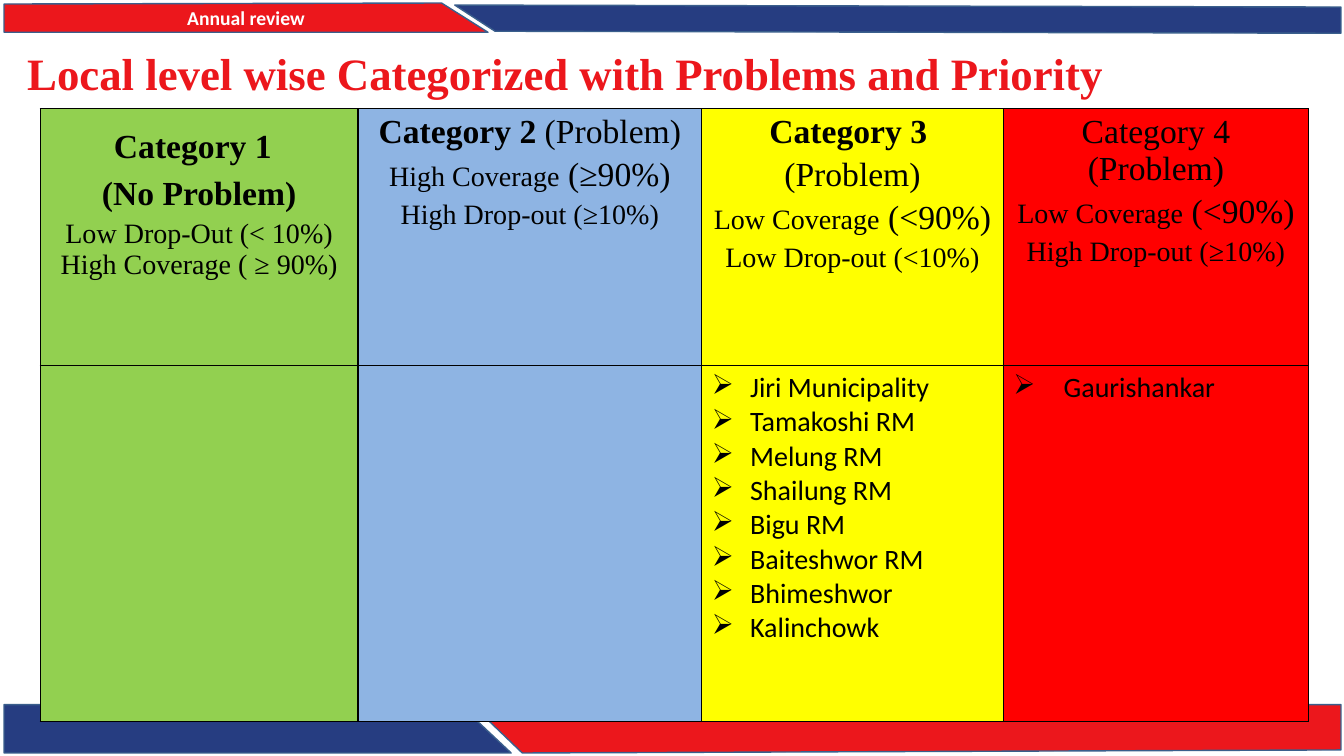
from dataclasses import dataclass

from lxml import etree
from pptx import Presentation
from pptx.dml.color import RGBColor
from pptx.enum.text import MSO_ANCHOR, PP_ALIGN
from pptx.oxml.ns import qn
from pptx.util import Emu, Pt

EMU_PER_PX = 9144  # 100 px to the inch
TITLE_ONLY = 5
CENTER, LEFT = PP_ALIGN.CENTER, PP_ALIGN.LEFT
MIDDLE = MSO_ANCHOR.MIDDLE


@dataclass(frozen=True)
class Theme:
    red: str = "EC171C"
    navy: str = "263D81"
    outline: str = "3A5F8C"
    white: str = "FFFFFF"
    black: str = "000000"
    serif: str = "Times New Roman"
    sans: str = "Calibri"
    title_size: int = 32
    gap_size: int = 36
    heading_size: int = 24
    body_size: int = 20
    tag_size: int = 14
    line_width: int = 1
    criteria_gap: int = 4


THEME = Theme()


@dataclass(frozen=True)
class Run:
    text: str
    size: int = THEME.body_size
    bold: bool = False
    font: str = THEME.serif
    color: str = THEME.black


@dataclass(frozen=True)
class Banner:
    points: tuple[tuple[int, int], ...]
    fill: str
    label: str = ""


@dataclass(frozen=True)
class Category:
    width: int
    fill: str
    criteria: tuple[tuple[Run, ...], ...]
    places: tuple[str, ...] = ()
    indent: int = 38


def heading(text: str, bold: bool = False) -> Run:
    return Run(text, THEME.heading_size, bold)


BANNERS = (
    Banner(((4, 4), (438, 3), (484, 32), (4, 32)), THEME.red, "Annual review"),
    Banner(((4, 699), (457, 700), (507, 747), (4, 747)), THEME.navy),
    Banner(((469, 700), (1330, 699), (1330, 744), (518, 747)), THEME.red),
    Banner(((451, 5), (1330, 7), (1330, 33), (491, 31)), THEME.navy),
)

LOW_COVERAGE = (Run("Low Coverage"), heading(" (<90%)"))
HIGH_DROP_OUT = (Run("High Drop-out (≥10%)"),)

CATEGORIES = (
    Category(315, "92D050", (
        (heading("Category 1", True), Run(" ", THEME.gap_size, True)),
        (heading("(No Problem)", True),),
        (Run("Low Drop-Out (< 10%)\vHigh Coverage ( ≥ 90%)"),),
    )),
    Category(341, "8EB4E3", (
        (heading("Category 2", True), heading(" (Problem)")),
        (Run("High Coverage"), heading(" (≥90%)")),
        HIGH_DROP_OUT,
    )),
    Category(299, "FFFF00", (
        (heading("Category 3 ", True),),
        (heading("(Problem)"),),
        LOW_COVERAGE,
        (Run("Low Drop-out (<10%)"),),
    ), ("Jiri Municipality", "Tamakoshi RM", "Melung RM", "Shailung RM",
        "Bigu RM", "Baiteshwor RM", "Bhimeshwor", "Kalinchowk")),
    Category(303, "FF0000", (
        (heading("Category 4 (Problem)"),),
        LOW_COVERAGE,
        HIGH_DROP_OUT,
    ), ("Gaurishankar",), 50),
)
ROW_HEIGHTS = (255, 353)


def px(length: int) -> Emu:
    return Emu(length * EMU_PER_PX)


def rgb(color: str) -> RGBColor:
    return RGBColor.from_string(color)


def add_run(paragraph, run: Run) -> None:
    for number, line in enumerate(run.text.split("\v")):
        if number:
            paragraph.add_line_break()
        part = paragraph.add_run()
        part.text = line
        part.font.size = Pt(run.size)
        part.font.bold = run.bold
        part.font.name = run.font
        part.font.color.rgb = rgb(run.color)


def paragraph_at(frame, number: int):
    return frame.add_paragraph() if number else frame.paragraphs[0]


def add_banner(slide, banner: Banner) -> None:
    start, *rest = banner.points
    builder = slide.shapes.build_freeform(*start, scale=EMU_PER_PX)
    builder.add_line_segments(rest, close=True)
    shape = builder.convert_to_shape()
    shape.shadow.inherit = False
    shape.fill.solid()
    shape.fill.fore_color.rgb = rgb(banner.fill)
    shape.line.color.rgb = rgb(THEME.outline)
    shape.line.width = Pt(THEME.line_width)
    if banner.label:
        frame = shape.text_frame
        frame.vertical_anchor = MIDDLE
        frame.margin_top = frame.margin_bottom = 0
        frame.paragraphs[0].alignment = CENTER
        add_run(frame.paragraphs[0], Run(banner.label, THEME.tag_size, True,
                                         THEME.sans, THEME.white))


def add_title(slide, text: str) -> None:
    title = slide.shapes.title
    title.left, title.top, title.width, title.height = map(px, (17, 42, 1299, 67))
    title.text_frame.vertical_anchor = MIDDLE
    paragraph = title.text_frame.paragraphs[0]
    paragraph.alignment = LEFT
    paragraph.line_spacing = 0.9
    add_run(paragraph, Run(text, THEME.title_size, True, color=THEME.red))


def style_cell(cell, fill: str) -> None:
    properties = cell._tc.get_or_add_tcPr()
    for side in ("a:lnL", "a:lnR", "a:lnT", "a:lnB"):
        border = etree.SubElement(properties, qn(side), w=str(Pt(THEME.line_width)))
        solid = etree.SubElement(border, qn("a:solidFill"))
        etree.SubElement(solid, qn("a:srgbClr"), val=THEME.black)
    cell.fill.solid()
    cell.fill.fore_color.rgb = rgb(fill)


def add_bullet(paragraph, indent: int) -> None:
    properties = paragraph._p.get_or_add_pPr()
    properties.set("marL", str(px(indent)))
    properties.set("indent", str(px(-indent)))
    etree.SubElement(properties, qn("a:buChar"), char="➢")


def add_category_table(slide) -> None:
    width = sum(category.width for category in CATEGORIES)
    table = slide.shapes.add_table(len(ROW_HEIGHTS), len(CATEGORIES), px(40), px(108),
                                   px(width), px(sum(ROW_HEIGHTS))).table
    table.first_row = table.horz_banding = False
    for row, height in zip(table.rows, ROW_HEIGHTS):
        row.height = px(height)

    for column, category in enumerate(CATEGORIES):
        table.columns[column].width = px(category.width)
        criteria_cell, places_cell = table.cell(0, column), table.cell(1, column)
        style_cell(criteria_cell, category.fill)
        style_cell(places_cell, category.fill)

        # Category name and its criteria
        for number, runs in enumerate(category.criteria):
            paragraph = paragraph_at(criteria_cell.text_frame, number)
            paragraph.alignment = CENTER
            if number:
                paragraph.space_before = Pt(THEME.criteria_gap)
            for run in runs:
                add_run(paragraph, run)

        # Local levels in the category
        for number, place in enumerate(category.places):
            paragraph = paragraph_at(places_cell.text_frame, number)
            add_bullet(paragraph, category.indent)
            add_run(paragraph, Run(place, font=THEME.sans))


def main() -> None:
    deck = Presentation()
    deck.slide_width, deck.slide_height = px(1333), px(750)
    slide = deck.slides.add_slide(deck.slide_layouts[TITLE_ONLY])
    for banner in BANNERS:
        add_banner(slide, banner)
    add_title(slide, "Local level wise Categorized with Problems and Priority")
    add_category_table(slide)
    deck.save("out.pptx")


if __name__ == "__main__":
    main()
